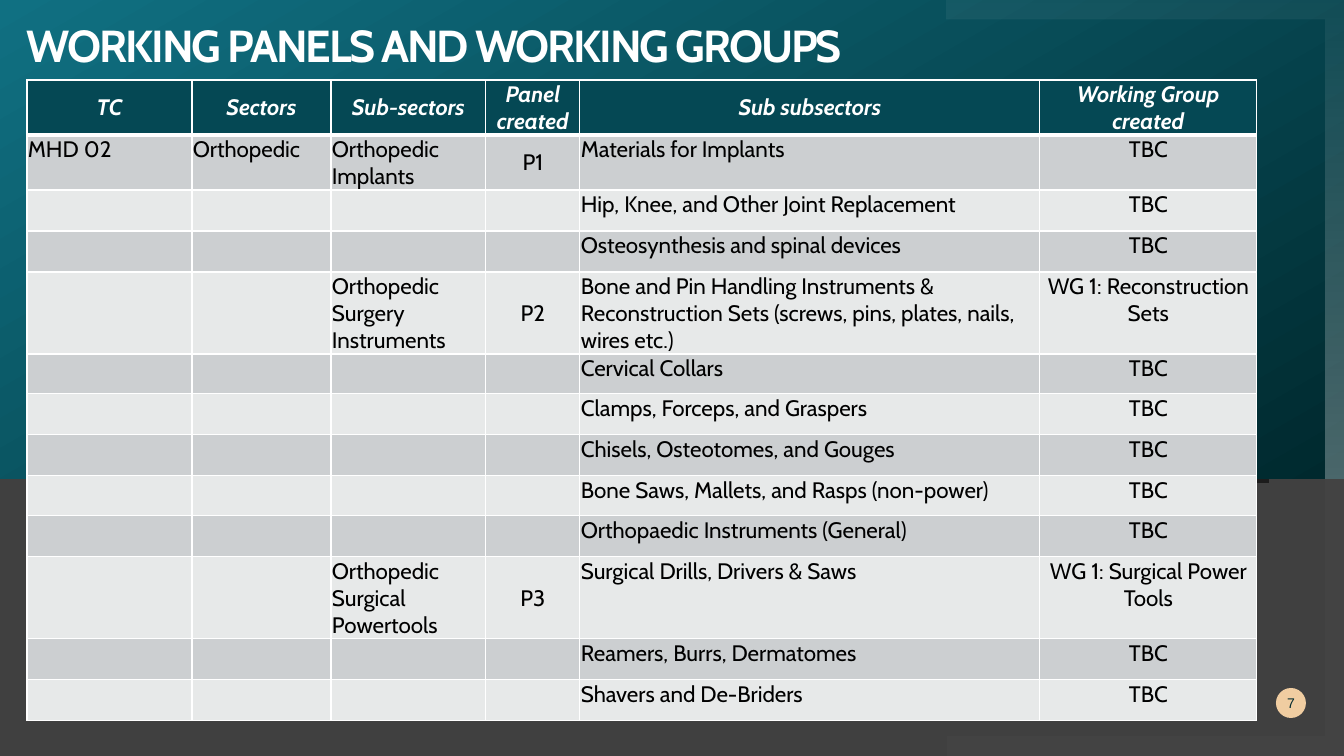
"""Builds the slide of working panels and working groups."""
from lxml import etree
from pptx import Presentation
from pptx.dml.color import RGBColor
from pptx.enum.shapes import MSO_SHAPE
from pptx.enum.text import MSO_ANCHOR, PP_ALIGN
from pptx.oxml import parse_xml
from pptx.oxml.ns import nsdecls, qn
from pptx.util import Pt

LEFT, CENTER = PP_ALIGN.LEFT, PP_ALIGN.CENTER
TOP, MIDDLE = MSO_ANCHOR.TOP, MSO_ANCHOR.MIDDLE
RECTANGLE, OVAL = MSO_SHAPE.RECTANGLE, MSO_SHAPE.OVAL

TITLE = "WORKING PANELS AND WORKING GROUPS"
PAGE_NUMBER = "7"
HEADINGS = ["TC", "Sectors", "Sub-sectors", "Panel created", "Sub subsectors",
            "Working Group created"]
ROWS = [
    ("MHD 02", "Orthopedic", "Orthopedic Implants", "P1", "Materials for Implants", "TBC"),
    ("", "", "", "", "Hip, Knee, and Other Joint Replacement", "TBC"),
    ("", "", "", "", "Osteosynthesis and spinal devices", "TBC"),
    ("", "", "Orthopedic Surgery Instruments", "P2",
     "Bone and Pin Handling Instruments & Reconstruction Sets "
     "(screws, pins, plates, nails, wires etc.)", "WG 1: Reconstruction Sets"),
    ("", "", "", "", "Cervical Collars", "TBC"),
    ("", "", "", "", "Clamps, Forceps, and Graspers", "TBC"),
    ("", "", "", "", "Chisels, Osteotomes, and Gouges", "TBC"),
    ("", "", "", "", "Bone Saws, Mallets, and Rasps (non-power)", "TBC"),
    ("", "", "", "", "Orthopaedic Instruments (General)", "TBC"),
    ("", "", "Orthopedic Surgical Powertools", "P3", "Surgical Drills, Drivers & Saws",
     "WG 1: Surgical Power Tools"),
    ("", "", "", "", "Reamers, Burrs, Dermatomes", "TBC"),
    ("", "", "", "", "Shavers and De-Briders", "TBC"),
]
COLUMN_EDGES = [27, 192, 331, 486, 580, 1040, 1257]
ROW_EDGES = [80, 135, 190, 231, 272, 354, 394, 435, 476, 516, 557, 639, 680, 721]
COLUMN_ALIGNMENTS = [LEFT, LEFT, LEFT, CENTER, LEFT, CENTER]
COLUMN_ANCHORS = [TOP, TOP, MIDDLE, MIDDLE, TOP, TOP]

COLORS = {"background": "404040", "dark": "00292E", "teal": "107082", "header": "054854",
          "odd": "CCCFD1", "even": "E7E9E9", "badge": "F0CDA1", "white": "FFFFFF",
          "black": "000000", "gray": "808080"}
UPPER_FRAME = [(947, 0), (1344, 0), (1344, 479), (1325, 479), (1325, 20), (947, 20)]
LOWER_FRAME = [(1325, 479), (1344, 479), (1344, 756), (947, 756), (947, 736), (1325, 736)]
SCALE = 914400 / 100.8


def px(length):
    return round(length * SCALE)


def rgb(name):
    return RGBColor.from_string(COLORS[name])


def apply(target, values):
    for name, value in values.items():
        setattr(target, name, value)


def write(frame, text, font, alignment=LEFT, line_spacing=None):
    paragraph = frame.paragraphs[0]
    apply(paragraph, {"alignment": alignment, "line_spacing": line_spacing})
    run = paragraph.add_run()
    run.text = text
    color = font.pop("color")
    apply(run.font, font)
    run.font.color.rgb = rgb(color)
    return run


def paint(shape, stops, angle=0):
    """Fills a shape with one (color, opacity) stop, or a gradient of two."""
    shape.shadow.inherit = False
    shape.line.fill.background()
    shape.fill.background()
    colors = [f'<a:srgbClr val="{COLORS[name]}"><a:alpha val="{opacity * 1000}"/></a:srgbClr>'
              for name, opacity in stops]
    if len(colors) == 1:
        xml = f'<a:solidFill {nsdecls("a")}>{colors[0]}</a:solidFill>'
    else:
        xml = (f'<a:gradFill {nsdecls("a")} rotWithShape="1"><a:gsLst>'
               f'<a:gs pos="0">{colors[0]}</a:gs><a:gs pos="100000">{colors[1]}</a:gs>'
               f'</a:gsLst><a:lin ang="{angle * 60000}" scaled="0"/></a:gradFill>')
    properties = shape._element.spPr
    properties.replace(properties.find(qn("a:noFill")), parse_xml(xml))


def add_preset(slide, preset, box, stops, angle=0):
    shape = slide.shapes.add_shape(preset, *map(px, box))
    paint(shape, stops, angle)
    return shape


def add_frame(slide, points, stops, angle=0):
    builder = slide.shapes.build_freeform(*points[0], scale=SCALE)
    builder.add_line_segments(points[1:], close=True)
    paint(builder.convert_to_shape(), stops, angle)


def set_borders(cell, widths):
    properties = cell._tc.get_or_add_tcPr()
    for index, (side, width) in enumerate(widths.items()):
        line = etree.Element(qn(f"a:ln{side}"), w=str(Pt(width)))
        fill = etree.SubElement(line, qn("a:solidFill"))
        etree.SubElement(fill, qn("a:srgbClr"), val=COLORS["white"])
        properties.insert(index, line)


def add_panel_table(slide):
    left, top = COLUMN_EDGES[0], ROW_EDGES[0]
    box = (left, top, COLUMN_EDGES[-1] - left, ROW_EDGES[-1] - top)
    table = slide.shapes.add_table(len(ROWS) + 1, len(HEADINGS), *map(px, box)).table
    for column, start, end in zip(table.columns, COLUMN_EDGES, COLUMN_EDGES[1:]):
        column.width = px(end - start)
    for row, start, end in zip(table.rows, ROW_EDGES, ROW_EDGES[1:]):
        row.height = px(end - start)
    for row_index, texts in enumerate([HEADINGS, *ROWS]):
        header = row_index == 0
        band = "header" if header else "odd" if row_index % 2 else "even"
        for column_index, text in enumerate(texts):
            cell = table.cell(row_index, column_index)
            apply(cell, {"margin_left": px(1), "margin_right": px(1), "margin_top": px(1),
                         "margin_bottom": 0,
                         "vertical_anchor": MIDDLE if header else COLUMN_ANCHORS[column_index]})
            cell.fill.solid()
            cell.fill.fore_color.rgb = rgb(band)
            set_borders(cell, {"L": 1, "R": 1, "T": 3 if row_index == 1 else 1,
                               "B": 3 if header else 1})
            if text:
                font = {"name": "Cabin", "size": Pt(16), "bold": header, "italic": header,
                        "color": "white" if header else "black"}
                write(cell.text_frame, text, font,
                      CENTER if header else COLUMN_ALIGNMENTS[column_index])


def main():
    presentation = Presentation()
    apply(presentation, {"slide_width": px(1344), "slide_height": px(756)})
    slide = presentation.slides.add_slide(presentation.slide_layouts[6])
    slide.background.fill.solid()
    slide.background.fill.fore_color.rgb = rgb("background")

    add_preset(slide, RECTANGLE, (75, 478, 1194, 5), [("black", 56)])
    add_preset(slide, RECTANGLE, (0, 0, 1344, 479), [("dark", 100), ("teal", 100)], 240)
    add_frame(slide, UPPER_FRAME, [("white", 5), ("white", 30)], 90)
    add_frame(slide, LOWER_FRAME, [("gray", 5)])

    no_margins = dict.fromkeys(
        ["margin_left", "margin_top", "margin_right", "margin_bottom"], 0)
    badge = add_preset(slide, OVAL, (1276, 688, 30, 30), [("badge", 100)])
    apply(badge.text_frame, {**no_margins, "vertical_anchor": MIDDLE, "word_wrap": False})
    write(badge.text_frame, PAGE_NUMBER,
          {"name": "Arial", "size": Pt(10), "color": "dark"}, CENTER)

    title = slide.shapes.add_textbox(*map(px, (27, 24, 1279, 97)))
    apply(title.text_frame, {**no_margins, "vertical_anchor": TOP, "word_wrap": True})
    run = write(title.text_frame, TITLE,
                {"name": "Cabin", "size": Pt(32), "bold": True, "color": "white"},
                line_spacing=0.9)
    run.font._element.set("spc", "-150")

    add_panel_table(slide)
    presentation.save("out.pptx")


if __name__ == "__main__":
    main()
